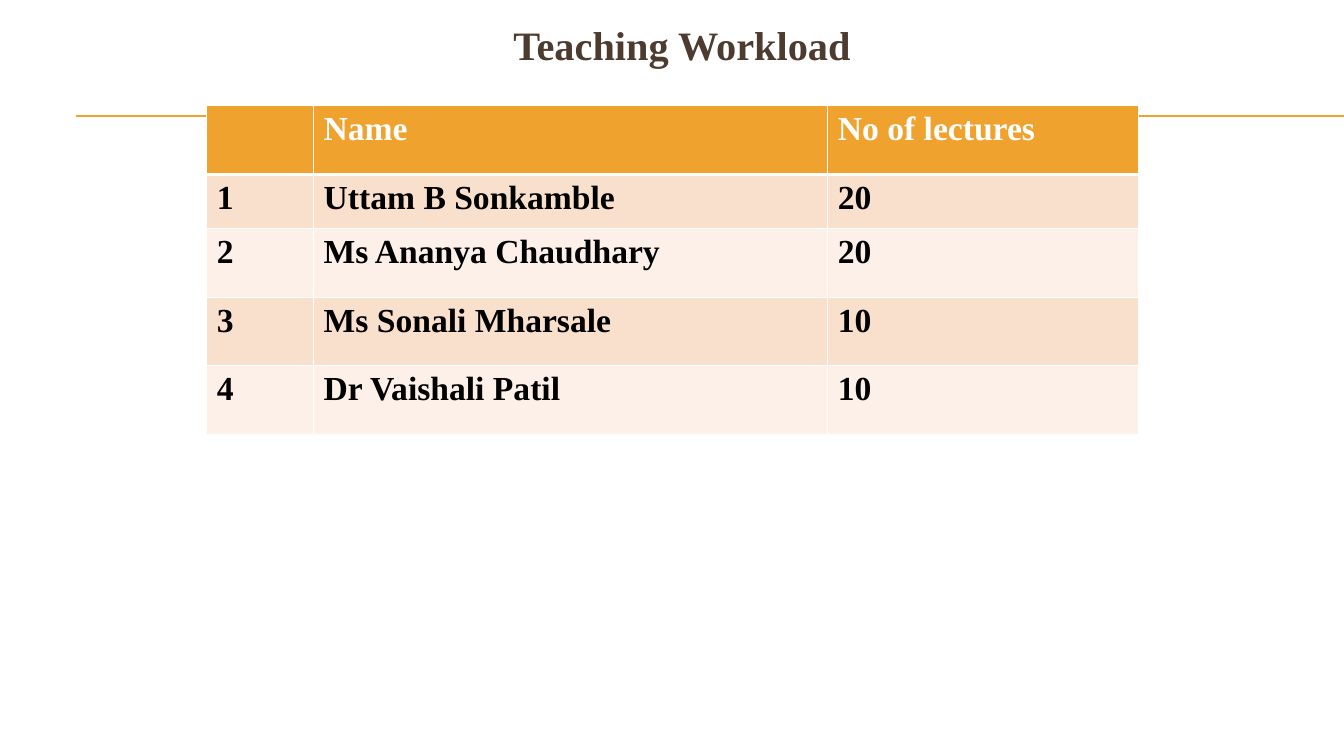
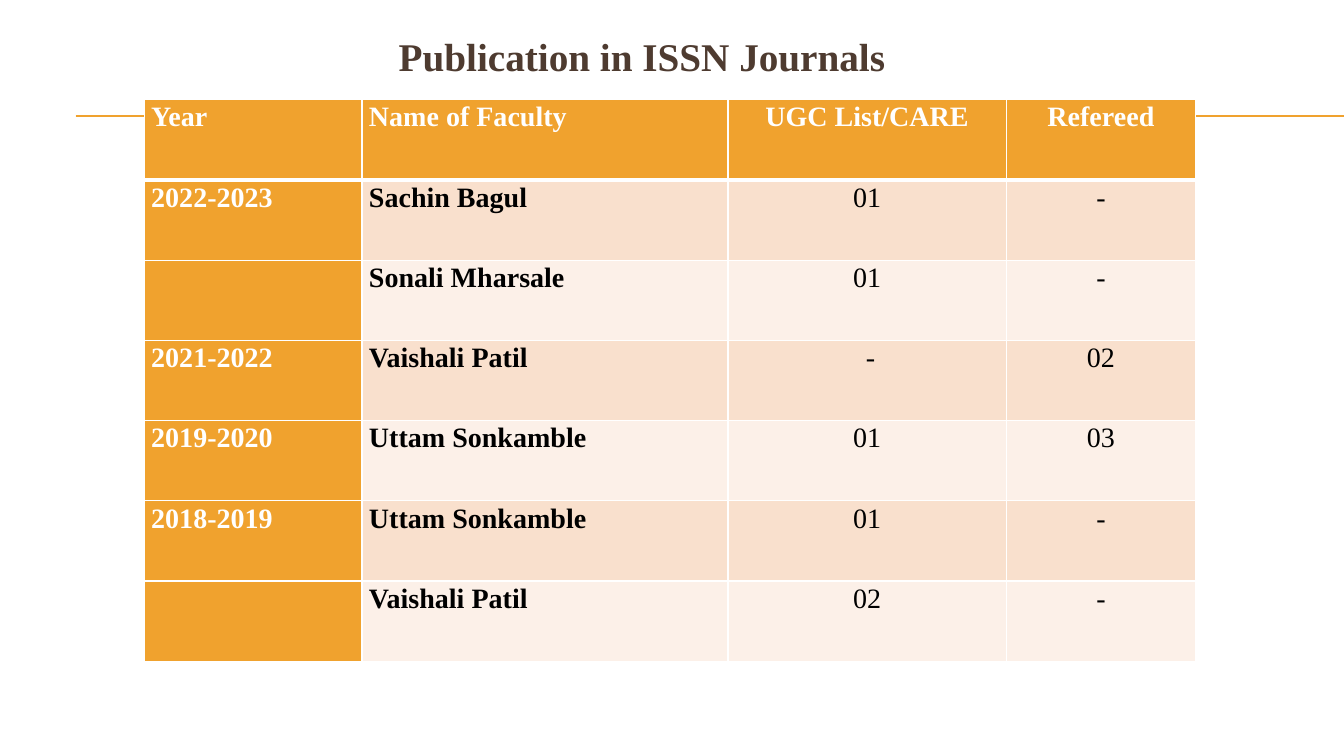
"""Build two slides with tables on teaching workload and journal publications."""
from pptx import Presentation, util as u
from pptx.dml.color import RGBColor
from pptx.enum import shapes, text
from pptx.oxml import parse_xml
from pptx.oxml.ns import nsdecls

FONT = "Times New Roman"
ORANGE, BROWN, WHITE, BLACK = "F0A22E", "4E3B30", "FFFFFF", "000000"
BANDS = ["F9E0CD", "FCF0E8"]
LEFT, CENTER = text.PP_ALIGN.LEFT, text.PP_ALIGN.CENTER

SLIDES = [
    {
        "title": "Teaching Workload ",
        "title_box": (0.48, 0.22, 12.67, 0.45),
        "title_size": 28.8,
        "anchor": text.MSO_ANCHOR.MIDDLE,
        "table_corner": (2.05, 1.05),
        "columns": [1.06, 5.1, 3.08],
        "heights": [0.68, 0.54, 0.68, 0.68, 0.68],
        "alignments": [LEFT, LEFT, LEFT],
        "bold": [True, True, True],
        "year_column": False,
        "size": 24,
        "margins": (0.1, 0.05),
        "line_spacing": 1.0,
        "rows": [
            ["", "Name", "No of lectures"],
            ["1", "Uttam B Sonkamble", "20"],
            ["2", "Ms Ananya Chaudhary", "20"],
            ["3", "Ms Sonali Mharsale", "10"],
            ["4", "Dr Vaishali Patil", "10"],
        ],
    },
    {
        "title": "Publication in ISSN Journals ",
        "title_box": (0.75, 0.27, 11.33, 0.72),
        "title_size": 28,
        "anchor": text.MSO_ANCHOR.TOP,
        "table_corner": (1.43, 0.99),
        "columns": [2.16, 3.63, 2.76, 1.88],
        "heights": [5.57 / 7] * 7,
        "alignments": [LEFT, LEFT, CENTER, CENTER],
        "bold": [True, True, False, False],
        "year_column": True,
        "size": 20,
        "margins": (0.07, 0),
        "line_spacing": 1.07,
        "rows": [
            ["Year", "Name of Faculty", "UGC List/CARE", "Refereed"],
            ["2022-2023", "Sachin Bagul", "01", "-"],
            ["", "Sonali Mharsale", "01", "-"],
            ["2021-2022", "Vaishali Patil", " -", "02"],
            ["2019-2020", "Uttam Sonkamble", "01", "03"],
            ["2018-2019", "Uttam Sonkamble", "01", "-"],
            ["", "Vaishali Patil", "02", "-"],
        ],
    },
]


def color(value):
    return RGBColor.from_string(value)


def format_paragraph(paragraph, size, value, bold, alignment):
    paragraph.alignment = alignment
    paragraph.font.name = FONT
    paragraph.font.size = u.Pt(size)
    paragraph.font.bold = bold
    paragraph.font.color.rgb = color(value)


presentation = Presentation()
presentation.slide_width = u.Inches(13.33)
presentation.slide_height = u.Inches(7.5)
layout = presentation.slide_layouts[5]
slides = [presentation.slides.add_slide(layout) for _ in SLIDES]

for y in (1.15, 1.16):
    rule = slides[0].shapes.add_connector(
        shapes.MSO_CONNECTOR.STRAIGHT,
        u.Inches(0.75), u.Inches(y), u.Inches(13.33), u.Inches(y))
    rule.line.color.rgb = color(ORANGE)
    rule.line.width = u.Pt(0.75)
    rule.element.spPr.append(parse_xml(f"<a:effectLst {nsdecls('a')}/>"))
    layout.shapes.element.append(rule.element)

for slide, content in zip(slides, SLIDES):
    title = slide.shapes.title
    title.left, title.top, title.width, title.height = map(u.Inches, content["title_box"])
    title.text_frame.text = content["title"]
    title.text_frame.auto_size = text.MSO_AUTO_SIZE.NONE
    title.text_frame.vertical_anchor = content["anchor"]
    format_paragraph(title.text_frame.paragraphs[0], content["title_size"], BROWN, True, CENTER)

    rows, columns, heights = content["rows"], content["columns"], content["heights"]
    left, top = content["table_corner"]
    table = slide.shapes.add_table(
        len(rows), len(columns), u.Inches(left), u.Inches(top),
        u.Inches(sum(columns)), u.Inches(sum(heights))).table
    table.first_col = content["year_column"]
    for column, width in zip(table.columns, columns):
        column.width = u.Inches(width)
    for row, height in zip(table.rows, heights):
        row.height = u.Inches(height)

    side_margin, end_margin = map(u.Inches, content["margins"])
    for i, values in enumerate(rows):
        for j, value in enumerate(values):
            cell = table.cell(i, j)
            cell.margin_left = cell.margin_right = side_margin
            cell.margin_top = cell.margin_bottom = end_margin
            properties = cell._tc.get_or_add_tcPr()
            for side in "LRTB":
                thick = (i, side) in ((0, "B"), (1, "T"))
                properties.append(parse_xml(
                    f'<a:ln{side} {nsdecls("a")} w="{u.Pt(3 if thick else 1)}"><a:solidFill>'
                    f'<a:srgbClr val="{WHITE}"/></a:solidFill></a:ln{side}>'))
            heading = i == 0 or (j == 0 and content["year_column"])
            cell.fill.solid()
            cell.fill.fore_color.rgb = color(ORANGE if heading else BANDS[(i - 1) % 2])
            cell.text = value
            paragraph = cell.text_frame.paragraphs[0]
            paragraph.line_spacing = content["line_spacing"]
            format_paragraph(paragraph, content["size"], WHITE if heading else BLACK,
                             heading or content["bold"][j], content["alignments"][j])

presentation.save("out.pptx")
